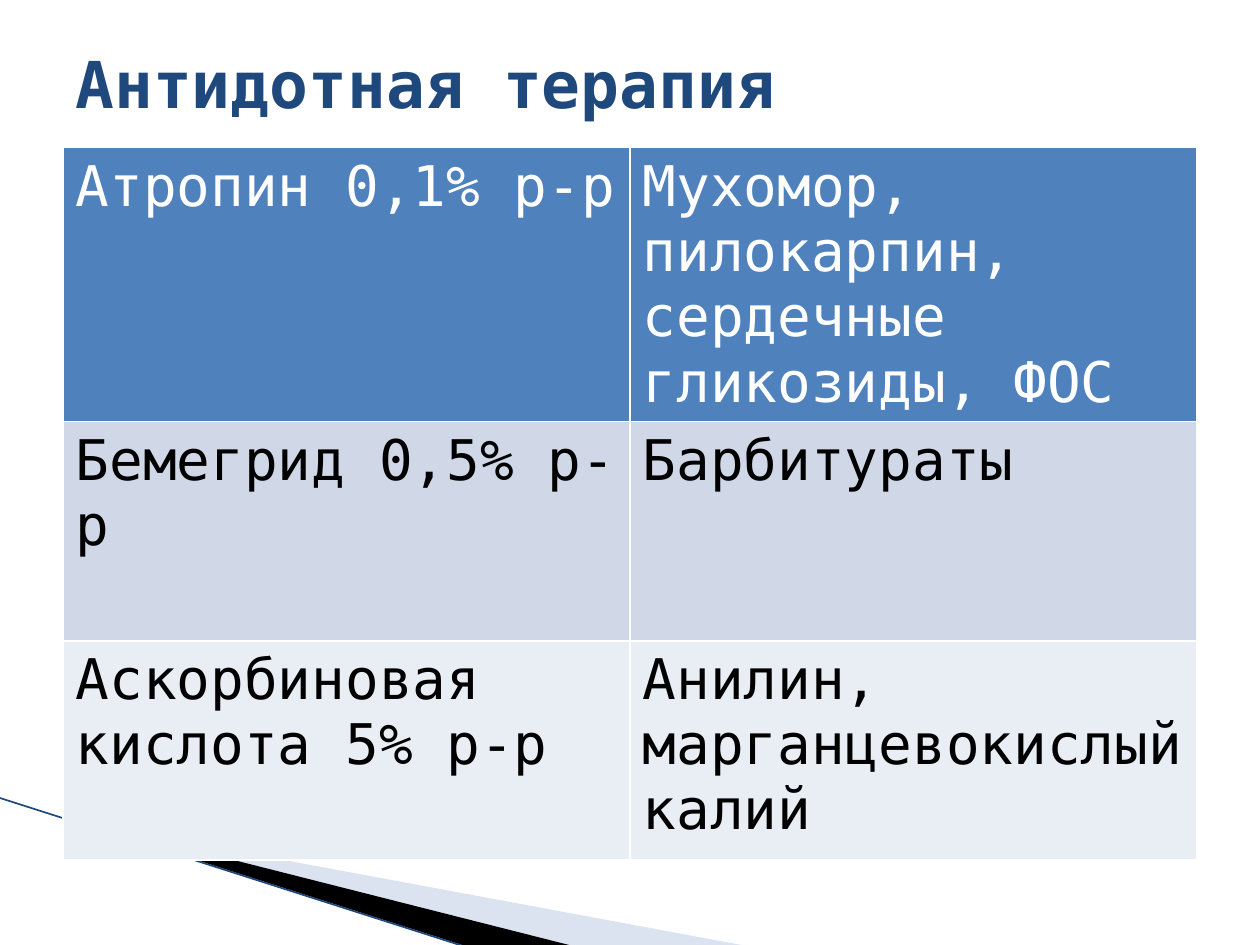
from lxml import etree
from pptx import Presentation
from pptx.dml.color import RGBColor
from pptx.enum.shapes import MSO_CONNECTOR
from pptx.enum.text import MSO_ANCHOR
from pptx.oxml.ns import qn
from pptx.util import Pt

STRAIGHT = MSO_CONNECTOR.STRAIGHT
MIDDLE = MSO_ANCHOR.MIDDLE

FONT = "DejaVu Sans Mono"
TITLE = "Антидотная терапия"
# left cell, right cell, height, fill, text colour
ROWS = [
    ("Атропин 0,1% р-р", "Мухомор, пилокарпин, сердечные гликозиды, ФОС",
     156, "4F81BD", "FFFFFF"),
    ("Бемегрид 0,5% р-р", "Барбитураты", 125.3, "D0D8E8", "000000"),
    ("Аскорбиновая кислота 5% р-р", "Анилин, марганцевокислый калий",
     125.3, "E9EDF4", "000000"),
]
# frame, points, fill, opacity in percent
WEDGES = [
    ((56.2, 393.8, 299.5, 113.8),
     [(39.6, 468.7), (427.5, 540.7), (328.3, 540.7), (39.6, 468)],
     "A7B9DB", 40),
    ((-4.3, 455.8, 299.5, 66.2),
     [(38.2, 467.3), (328, 540.7), (268.5, 541.4), (38.9, 468)],
     "000000", 100),
]
EDGE = (-0.7, 455.8, 267.1, 541.4)
LEFT, WIDTH = 36, 648


def color(text):
    return RGBColor.from_string(text)


def write(frame, text, size, tint, bold=False):
    frame.word_wrap = True
    run = frame.paragraphs[0].add_run()
    run.text = text
    font = run.font
    font.name, font.size, font.bold = FONT, Pt(size), bold
    font.color.rgb = color(tint)


def reframe(shape, frame):
    """Give a freeform another frame while its outline stays in place."""
    left, top, width, height = map(Pt, frame)
    for spot in shape._element.iter(qn("a:pt")):
        spot.set("x", str(int(spot.get("x")) + shape.left - left))
        spot.set("y", str(int(spot.get("y")) + shape.top - top))
    for route in shape._element.iter(qn("a:path")):
        route.set("w", str(width))
        route.set("h", str(height))
    shape.left, shape.top = left, top
    shape.width, shape.height = width, height


def wedge(frame, points, tint, alpha):
    spots = [(Pt(x), Pt(y)) for x, y in points]
    form = shapes.build_freeform(*spots[0])
    form.add_line_segments(spots[1:], close=True)
    shape = form.convert_to_shape()
    reframe(shape, frame)
    shape.shadow.inherit = False
    shape.line.fill.background()
    shape.fill.solid()
    shape.fill.fore_color.rgb = color(tint)
    if alpha < 100:
        node = shape.fill._xPr.find(".//" + qn("a:srgbClr"))
        etree.SubElement(node, qn("a:alpha"), val=str(alpha * 1000))


def border(cell, tint, width):
    """Line all four sides of a cell; the lines must precede its fill."""
    props = cell._tc.get_or_add_tcPr()
    for side in ("lnL", "lnR", "lnT", "lnB"):
        line = etree.SubElement(props, qn("a:" + side), w=str(Pt(width)))
        fill = etree.SubElement(line, qn("a:solidFill"))
        etree.SubElement(fill, qn("a:srgbClr"), val=tint)


deck = Presentation()
deck.slide_width, deck.slide_height = Pt(720), Pt(540)
shapes = deck.slides.add_slide(deck.slide_layouts[6]).shapes

for item in WEDGES:
    wedge(*item)

edge = shapes.add_connector(STRAIGHT, *map(Pt, EDGE))
edge.line.color.rgb = color("1F497D")
edge.line.width = Pt(0.95)
etree.SubElement(edge._element.spPr, qn("a:effectLst"))

high = sum(row[2] for row in ROWS)
table = shapes.add_table(len(ROWS), 2, Pt(LEFT), Pt(84.4),
                         Pt(WIDTH), Pt(high)).table
for r, (drug, poison, tall, fill, tint) in enumerate(ROWS):
    table.rows[r].height = Pt(tall)
    for c, text in enumerate((drug, poison)):
        cell = table.cell(r, c)
        border(cell, "FFFFFF", 1)
        cell.fill.solid()
        cell.fill.fore_color.rgb = color(fill)
        write(cell.text_frame, text, 32, tint)

title = shapes.add_textbox(Pt(LEFT), Pt(21.6), Pt(WIDTH), Pt(51.8))
title.text_frame.vertical_anchor = MIDDLE
write(title.text_frame, TITLE, 36.9, "1F497D", True)

deck.save("out.pptx")
